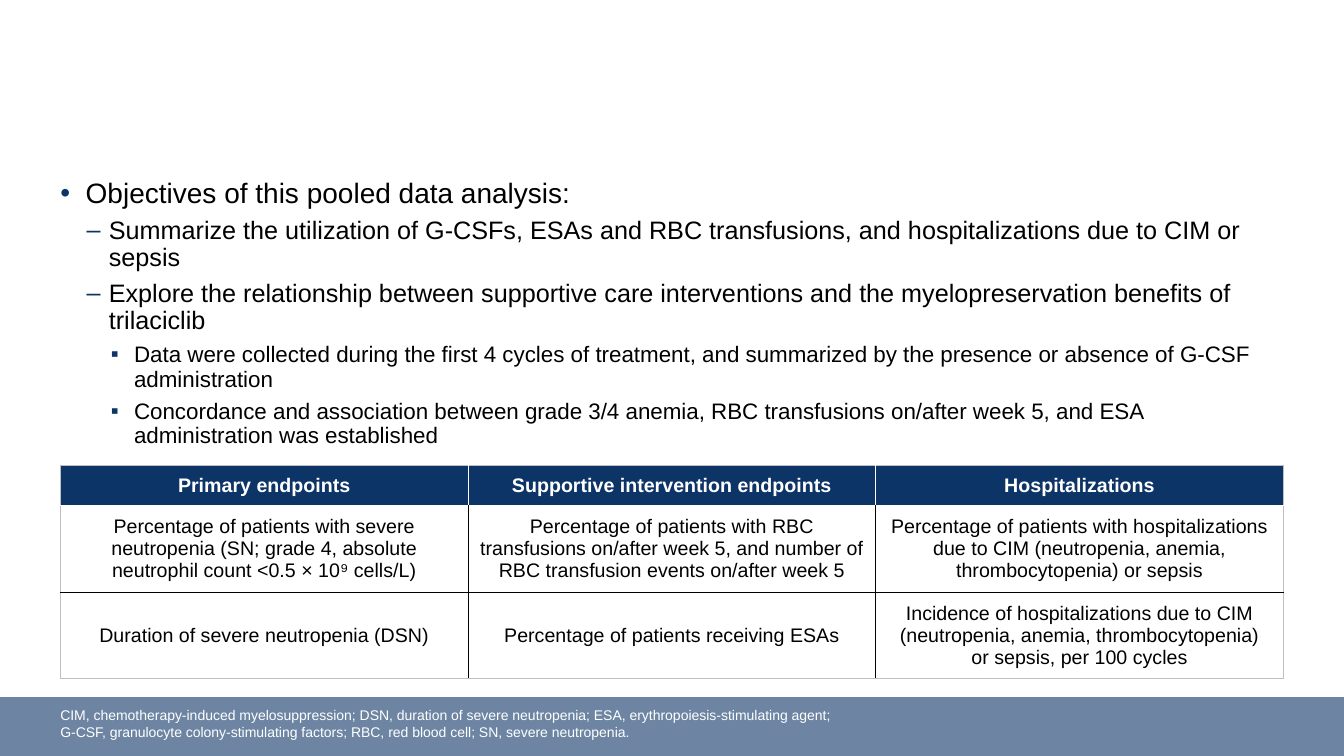
from lxml.etree import SubElement
from pptx import Presentation
from pptx.dml.color import RGBColor
from pptx.enum.shapes import MSO_SHAPE
from pptx.enum.text import MSO_ANCHOR, MSO_AUTO_SIZE, PP_ALIGN
from pptx.oxml.ns import qn
from pptx.util import Pt

NAVY, WHITE, BLACK, GREY = "0C3467", "FFFFFF", "000000", "BFBFBF"
WIDE, HIGH = 960, 540
LEFT, SPAN = 43.2, 873.6

LEVELS = [("•", 18, -18, 20), ("–", 34.56, -15.84, 18), ("▪", 52.56, -16.56, 16)]
GOALS = [
    (0, "Objectives of this pooled data analysis:"),
    (1, "Summarize the utilization of G-CSFs, ESAs and RBC transfusions, and hospitalizations due to CIM or sepsis"),
    (1, "Explore the relationship between supportive care interventions and the myelopreservation benefits of trilaciclib"),
    (2, "Data were collected during the first 4 cycles of treatment, and summarized by the presence or absence of G-CSF administration"),
    (2, "Concordance and association between grade 3/4 anemia, RBC transfusions on/after week 5, and ESA administration was established"),
]
ROWS = [
    ("Primary endpoints", "Supportive intervention endpoints", "Hospitalizations"),
    ("Percentage of patients with severe neutropenia (SN; grade 4, absolute neutrophil count <0.5 × 10⁹ cells/L)",
     "Percentage of patients with RBC transfusions on/after week 5, and number of RBC transfusion events on/after week 5",
     "Percentage of patients with hospitalizations due to CIM (neutropenia, anemia, thrombocytopenia) or sepsis"),
    ("Duration of severe neutropenia (DSN)",
     "Percentage of patients receiving ESAs",
     "Incidence of hospitalizations due to CIM (neutropenia, anemia, thrombocytopenia)\vor sepsis, per 100 cycles"),
]
NOTE = ("CIM, chemotherapy-induced myelosuppression; DSN, duration of severe neutropenia; "
        "ESA, erythropoiesis-stimulating agent;\v"
        "G-CSF, granulocyte colony-stimulating factors; RBC, red blood cell; SN, severe neutropenia.")


def tint(color, code):
    color.rgb = RGBColor.from_string(code)


def style(para, size, code, bold=False):
    for run in para.runs:
        font = run.font
        font.name, font.size, font.bold = "Arial", Pt(size), bold
        tint(font.color, code)


def place(shape, box):
    shape.left, shape.top, shape.width, shape.height = map(Pt, box)


def bullet(para, sign, left, hang):
    props = para._p.get_or_add_pPr()
    props.set("marL", str(Pt(left)))
    props.set("indent", str(Pt(hang)))
    color = SubElement(props, qn("a:buClr"))
    SubElement(color, qn("a:srgbClr")).set("val", NAVY)
    SubElement(props, qn("a:buFont")).set("typeface", "Arial")
    SubElement(props, qn("a:buChar")).set("char", sign)


def border(cell, sides):
    props = cell._tc.get_or_add_tcPr()
    for spot, (side, code) in enumerate(sides):
        line = props.makeelement(qn("a:ln" + side), {"w": str(Pt(1))})
        fill = SubElement(line, qn("a:solidFill"))
        SubElement(fill, qn("a:srgbClr")).set("val", code)
        props.insert(spot, line)


def footer(slide, box):
    left, top, width, height = box
    band = slide.shapes.add_shape(MSO_SHAPE.RECTANGLE, *map(Pt, box))
    band.shadow.inherit = False
    band.fill.solid()
    tint(band.fill.fore_color, NAVY)
    shade = band.fill._xPr.find(qn("a:solidFill"))[0]
    SubElement(shade, qn("a:alpha")).set("val", "60000")
    band.line.fill.background()
    note = slide.shapes.add_textbox(Pt(left + 36), Pt(top + 3), Pt(width - 38), Pt(31.5))
    frame = note.text_frame
    frame.word_wrap = True
    frame.text = NOTE
    style(frame.paragraphs[0], 10, WHITE)


def goals(slide, box):
    body = slide.placeholders[1]
    place(body, box)
    frame = body.text_frame
    frame.auto_size = MSO_AUTO_SIZE.NONE
    frame.margin_left = frame.margin_right = frame.margin_top = frame.margin_bottom = 0
    frame.text = "\n".join(text for level, text in GOALS)
    for para, (level, text) in zip(frame.paragraphs, GOALS):
        sign, left, hang, size = LEVELS[level]
        para.level = level
        para.line_spacing = 0.9
        para.space_before, para.space_after = Pt(0), Pt(6)
        bullet(para, sign, left, hang)
        style(para, size, BLACK)


def grid(slide, box):
    width, height = box[2:]
    last, end = len(ROWS) - 1, len(ROWS[0]) - 1
    table = slide.shapes.add_table(last + 1, end + 1, *map(Pt, box)).table
    head = 28.6
    for col in table.columns:
        col.width = Pt(width / (end + 1))
    for r, row in enumerate(ROWS):
        table.rows[r].height = Pt((height - head) / last if r else head)
        inner = BLACK if r else WHITE
        for c, text in enumerate(row):
            cell = table.cell(r, c)
            cell.text = text
            cell.vertical_anchor = MSO_ANCHOR.MIDDLE
            cell.margin_left = cell.margin_right = Pt(7.2)
            cell.margin_top = cell.margin_bottom = Pt(5.76)
            cell.fill.solid()
            tint(cell.fill.fore_color, WHITE if r else NAVY)
            para = cell.text_frame.paragraphs[0]
            para.alignment = PP_ALIGN.CENTER
            style(para, 14, BLACK if r else WHITE, r == 0)
            border(cell, [
                ("L", inner if c else GREY),
                ("R", inner if c < end else GREY),
                ("T", (GREY, WHITE, BLACK)[r]),
                ("B", (WHITE, BLACK, GREY)[r]),
            ])


def main():
    deck = Presentation()
    deck.slide_width, deck.slide_height = Pt(WIDE), Pt(HIGH)
    slide = deck.slides.add_slide(deck.slide_layouts[1])
    title = slide.shapes.title._element
    title.getparent().remove(title)
    footer(slide, (0, 498, WIDE, HIGH - 498))
    grid(slide, (LEFT, 332.4, SPAN, 152))
    goals(slide, (LEFT, 128, SPAN, 199.5))
    deck.save("out.pptx")


if __name__ == "__main__":
    main()
